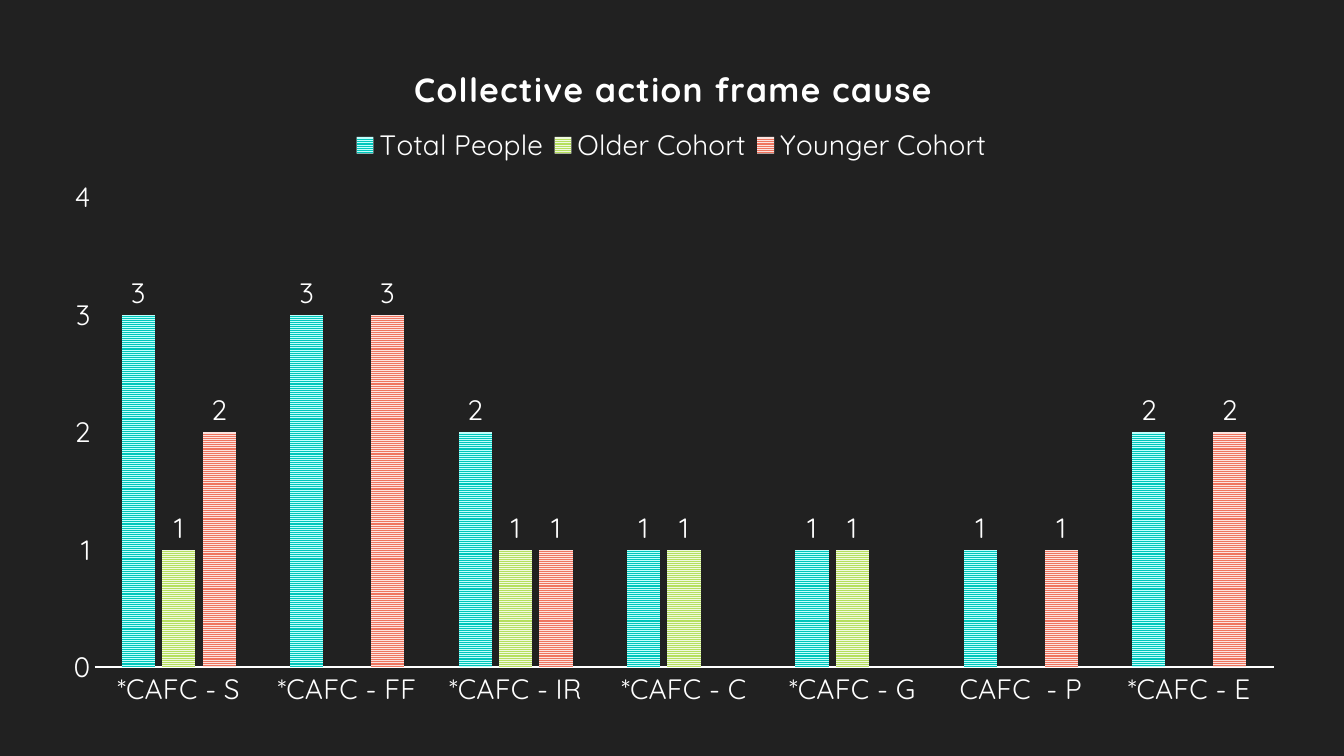
from lxml import etree
from pptx import Presentation
from pptx import util as u
from pptx.chart.data import CategoryChartData
from pptx.dml.color import RGBColor
from pptx.enum import chart as ch, dml
from pptx.oxml.ns import qn

FACE = "Quicksand"
HUES = {
    "back": "212121", "ink": "FFFFFF",
    "Total People": ("00C6BB", "C1FFFC"),
    "Older Cohort": ("B6DF5E", "F0F9DF"),
    "Younger Cohort": ("EF755F", "FCE3DF"),
}
COUNTS = {
    "Total People": (3, 3, 2, 1, 1, 1, 2),
    "Older Cohort": (1, None, 1, 1, 1, None, None),
    "Younger Cohort": (2, 3, 1, None, None, 1, 2),
}


def style(font, size=20, bold=False):
    font.name, font.size, font.bold = FACE, u.Pt(size), bold
    font.color.rgb = RGBColor.from_string(HUES["ink"])


def place(part, spot, **box):
    """Give a chart part a fixed place, in shares of the chart's size."""
    for old in part.findall(qn("c:layout")):
        part.remove(old)
    frame = etree.Element(qn("c:layout"))
    man = etree.SubElement(frame, qn("c:manualLayout"))
    if part.tag == qn("c:plotArea"):
        etree.SubElement(man, qn("c:layoutTarget")).set("val", "inner")
    for key in ("xMode", "yMode"):
        etree.SubElement(man, qn("c:" + key)).set("val", "edge")
    for key, share in box.items():
        etree.SubElement(man, qn("c:" + key)).set("val", str(share))
    part.insert(spot, frame)


deck = Presentation()
deck.slide_width, deck.slide_height = u.Inches(13.33), u.Inches(7.5)
slide = deck.slides.add_slide(deck.slide_layouts[6])
slide.background.fill.solid()
slide.background.fill.fore_color.rgb = RGBColor.from_string(HUES["back"])

# Chart
data = CategoryChartData()
data.categories = ["*CAFC - S", "*CAFC - FF", "*CAFC - IR", "*CAFC - C",
                   "*CAFC - G", "CAFC  - P", "*CAFC - E"]
for name, vals in COUNTS.items():
    data.add_series(name, vals)
chart = slide.shapes.add_chart(
    ch.XL_CHART_TYPE.COLUMN_CLUSTERED, u.Inches(0.44), u.Inches(0.31),
    u.Inches(12.44), u.Inches(6.86), data).chart
style(chart.font)

# Columns
plot = chart.plots[0]
plot.gap_width, plot.overlap, plot.vary_by_categories = 164, -22, False
for row in plot.series:
    fill = row.format.fill
    fill.patterned()
    fill.pattern = dml.MSO_PATTERN.NARROW_HORIZONTAL
    fore, back = HUES[row.name]
    fill.fore_color.rgb = RGBColor.from_string(fore)
    fill.back_color.rgb = RGBColor.from_string(back)
    row.invert_if_negative = False
    tags = row.data_labels
    tags.show_value = True
    tags.position = ch.XL_LABEL_POSITION.OUTSIDE_END
    style(tags.font)

# Axes
for axis in (chart.category_axis, chart.value_axis):
    axis.has_major_gridlines = False
    axis.major_tick_mark = axis.minor_tick_mark = ch.XL_TICK_MARK.NONE
    style(axis.tick_labels.font)
base = chart.category_axis.format.line
base.width = u.Pt(1.5)
base.color.rgb = RGBColor.from_string(HUES["ink"])
scale = chart.value_axis
scale.minimum_scale, scale.maximum_scale, scale.major_unit = 0, 4, 1
scale.format.line.fill.background()

# Title and legend
chart.has_title = True
head = chart.chart_title.text_frame.paragraphs[0]
run = head.add_run()
run.text = "Collective action frame cause"
style(run.font, 24, True)
chart.element.find(".//" + qn("a:rPr")).set("spc", "100")
chart.has_legend = True
chart.legend.position = ch.XL_LEGEND_POSITION.TOP
chart.legend.include_in_layout = False
style(chart.legend.font)

area = chart.element.find(qn("c:chart"))
place(area.find(qn("c:title")), 1, x=0.29, y=0.04)
place(area.find(qn("c:legend")), 1, x=0.24, y=0.13, w=0.52, h=0.07)
place(area.find(qn("c:plotArea")), 0, x=0.04, y=0.24, w=0.94, h=0.68)

deck.save("out.pptx")
